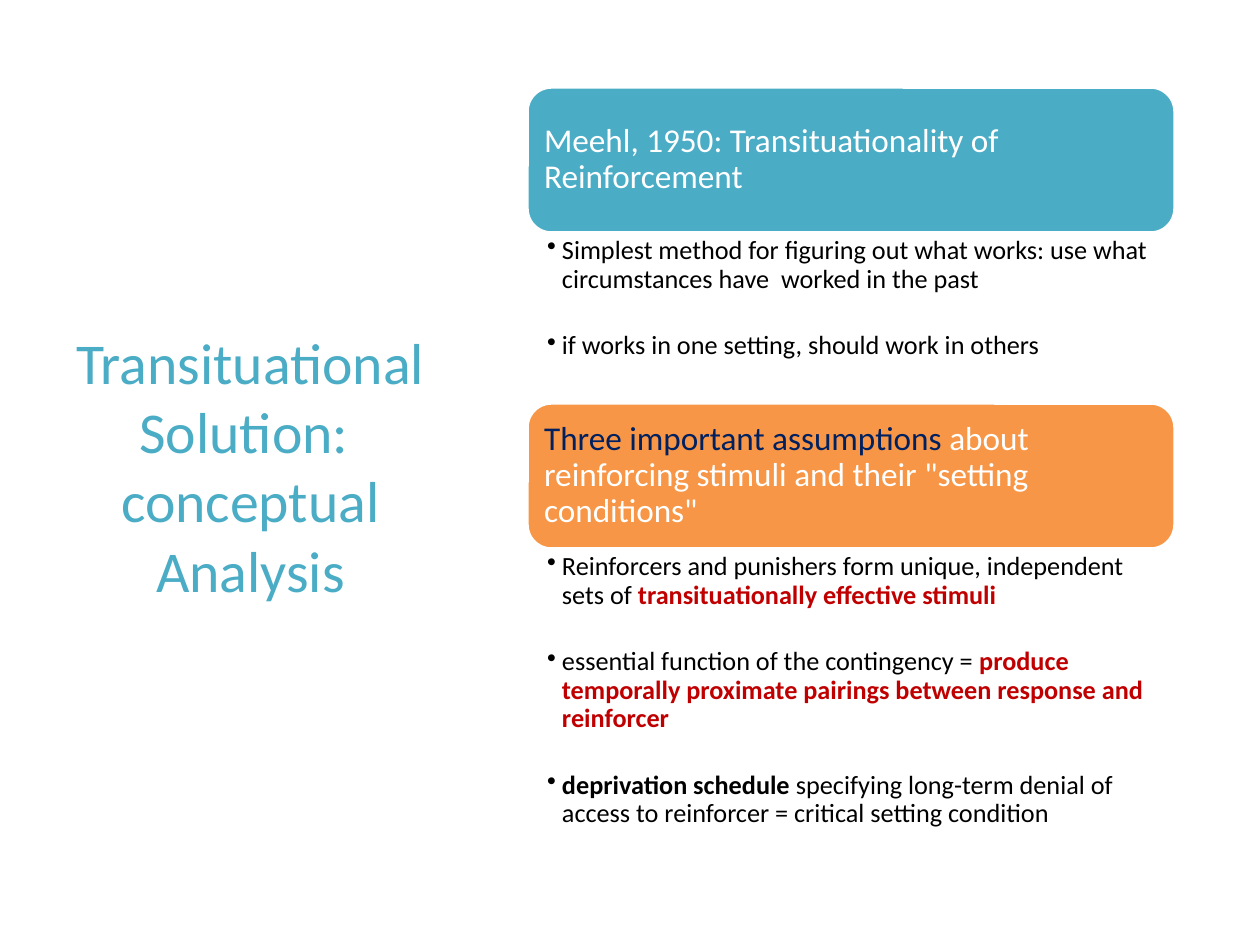
from dataclasses import dataclass

from lxml import etree
from pptx import Presentation
from pptx import util as u
from pptx.dml.color import RGBColor
from pptx.enum import shapes, text
from pptx.oxml import ns

EMU_PER_PX = 914400 / 126
FONT = "Calibri"
COLORS = {
    "teal": "4BACC6",
    "orange": "F79646",
    "navy": "002060",
    "red": "C00000",
    "white": "FFFFFF",
    "black": "000000",
}
COLUMN_LEFT, COLUMN_WIDTH = 527, 648
COLUMN_TOP, HEADING_HEIGHT = 87, 146
HEADING_INSET, BULLET_INDENT = 10, 15


@dataclass(frozen=True)
class Span:
    words: str
    color: str = "black"
    bold: bool = False


@dataclass(frozen=True)
class Section:
    fill: str
    heading: list[Span]
    bullets: list[list[Span]]
    body_height: int


SECTIONS = [
    Section(
        "teal",
        [Span("Meehl, 1950: Transituationality of Reinforcement", "white")],
        [
            [Span("Simplest method for figuring out what works: use what "
                  "circumstances have  worked in the past")],
            [Span("if works in one setting, should work in others")],
        ],
        170,
    ),
    Section(
        "orange",
        [
            Span("Three important assumptions", "navy"),
            Span(' about reinforcing stimuli and their "setting conditions"', "white"),
        ],
        [
            [
                Span("Reinforcers and punishers form unique, independent sets of "),
                Span("transituationally effective stimuli", "red", True),
            ],
            [
                Span("essential function of the contingency = "),
                Span("produce temporally proximate pairings between response "
                     "and reinforcer", "red", True),
            ],
            [
                Span("deprivation schedule ", bold=True),
                Span("specifying long-term denial of access to reinforcer = "
                     "critical setting condition"),
            ],
        ],
        292,
    ),
]


def px(length: int) -> u.Emu:
    return u.Emu(round(length * EMU_PER_PX))


def rgb(name: str) -> RGBColor:
    return RGBColor.from_string(COLORS[name])


def add_spans(para, spans: list[Span], size: int) -> None:
    for span in spans:
        run = para.add_run()
        run.text = span.words
        run.font.name = FONT
        run.font.size = u.Pt(size)
        run.font.bold = span.bold
        run.font.color.rgb = rgb(span.color)


def set_frame(box, anchor, left: int, top: int, right: int, bottom: int):
    frame = box.text_frame
    frame.word_wrap = True
    frame.vertical_anchor = anchor
    frame.margin_left, frame.margin_top = px(left), px(top)
    frame.margin_right, frame.margin_bottom = px(right), px(bottom)
    return frame


def add_bullet(para) -> None:
    properties = para._p.get_or_add_pPr()
    properties.set("marL", str(px(BULLET_INDENT)))
    properties.set("indent", str(-px(BULLET_INDENT)))
    etree.SubElement(properties, ns.qn("a:buChar")).set("char", "•")


def add_title(page) -> None:
    box = page.shapes.add_textbox(px(54), px(86), px(393), px(758))
    frame = set_frame(box, text.MSO_ANCHOR.MIDDLE, 13, 6, 13, 6)
    para = frame.paragraphs[0]
    para.alignment = text.PP_ALIGN.CENTER
    add_spans(para, [Span("Transituational Solution: ", "teal")], 33)
    para.add_line_break()
    add_spans(para, [Span("conceptual Analysis", "teal")], 33)


def add_heading(page, section: Section, top: int) -> None:
    box = page.shapes.add_shape(
        shapes.MSO_SHAPE.ROUNDED_RECTANGLE,
        px(COLUMN_LEFT), px(top), px(COLUMN_WIDTH), px(HEADING_HEIGHT),
    )
    box.shadow.inherit = False
    box.fill.solid()
    box.fill.fore_color.rgb = rgb(section.fill)
    box.line.color.rgb = rgb("white")
    box.line.width = u.Pt(2)
    frame = set_frame(box, text.MSO_ANCHOR.MIDDLE, *[HEADING_INSET] * 4)
    para = frame.paragraphs[0]
    para.alignment = text.PP_ALIGN.LEFT
    para.line_spacing = 0.9
    add_spans(para, section.heading, 19)


def add_body(page, section: Section, top: int) -> None:
    box = page.shapes.add_textbox(
        px(COLUMN_LEFT), px(top), px(COLUMN_WIDTH), px(section.body_height)
    )
    frame = set_frame(box, text.MSO_ANCHOR.TOP, 20, 4, 19, 4)
    for index, spans in enumerate(section.bullets):
        para = frame.add_paragraph() if index else frame.paragraphs[0]
        para.line_spacing = 0.9
        para.space_after = u.Pt(22)
        add_bullet(para)
        add_spans(para, spans, 15)


def main() -> None:
    """Build the slide with a title beside two headed bullet sections."""
    deck = Presentation()
    deck.slide_width, deck.slide_height = px(1260), px(945)
    page = deck.slides.add_slide(deck.slide_layouts[6])
    add_title(page)
    top = COLUMN_TOP
    for section in SECTIONS:
        add_heading(page, section, top)
        top += HEADING_HEIGHT
        add_body(page, section, top)
        top += section.body_height
    deck.save("out.pptx")


if __name__ == "__main__":
    main()
